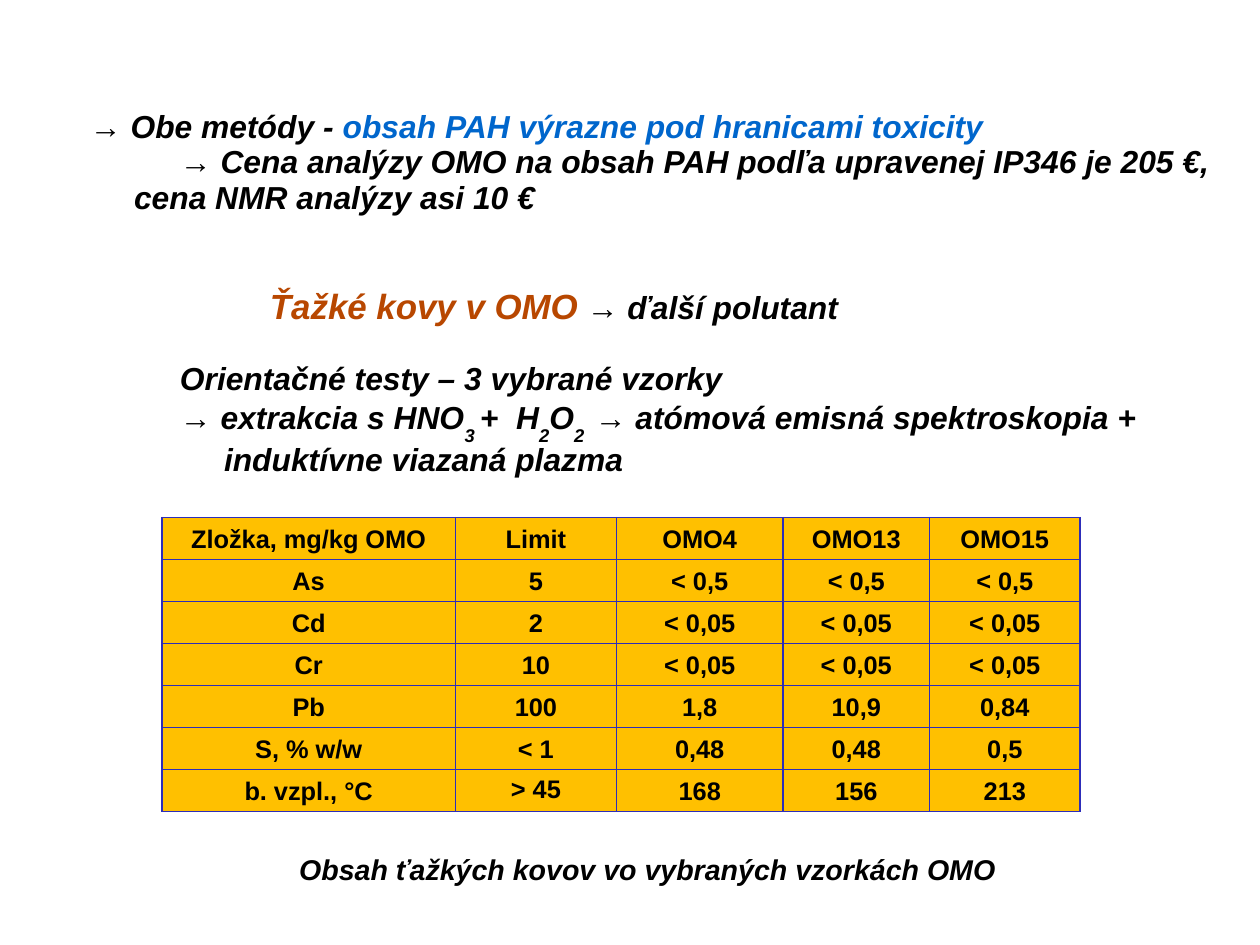
from dataclasses import dataclass, field
from itertools import product
from typing import Any, NamedTuple

from lxml.etree import SubElement
from pptx import Presentation
from pptx.dml.color import RGBColor
from pptx.enum.text import MSO_ANCHOR, PP_ALIGN
from pptx.oxml.ns import qn
from pptx.util import Emu, Inches, Pt

SLIDE_WIDTH, SLIDE_HEIGHT = Emu(10080625), Emu(7559675)
UNIT = SLIDE_WIDTH / 14


@dataclass(frozen=True)
class Theme:
    font: str = "Arial"
    ink: str = "000000"
    result: str = "0066CC"
    heading: str = "B84700"
    cell: str = "FFC000"
    border: str = "2D2DB9"
    body_size: int = 20
    heading_size: int = 22
    table_size: int = 16
    caption_size: int = 18
    border_width: float = 1
    subscript: int = -42000
    line_spacing: float = 0.93
    cell_spacing: float = 0.87


THEME = Theme()


class Frame(NamedTuple):
    column: float
    row: float
    columns: float
    rows: float


class Phrase(NamedTuple):
    text: str
    color: str = THEME.ink
    size: int = THEME.body_size
    italic: bool = True
    lowered: bool = False


@dataclass(frozen=True)
class Passage:
    phrases: list[Phrase]
    margin: float = 0
    indent: float = 0
    layout: dict[str, Any] = field(default_factory=dict)


FINDINGS_FRAME = Frame(1, 1, 12.6, 4.55)
FINDINGS_INSET = 0.22
FINDINGS = [
    Passage([Phrase("→ Obe metódy - "),
             Phrase("obsah PAH výrazne pod hranicami toxicity", THEME.result)]),
    Passage([Phrase("→ Cena analýzy OMO na obsah PAH podľa upravenej IP346 je 205 €, "
                    "cena NMR analýzy asi 10 €")], 0.49, 0.51),
    Passage([Phrase("Ťažké kovy v OMO", THEME.heading, THEME.heading_size),
             Phrase(" → ďalší polutant")], 2, 0, {"space_before": Pt(45.5)}),
    Passage([Phrase("Orientačné testy – 3 vybrané vzorky")], 1, 0, {"space_before": Pt(22)}),
    Passage([Phrase("→ extrakcia s HNO"), Phrase("3 ", lowered=True),
             Phrase("+  H"), Phrase("2", lowered=True),
             Phrase("O"), Phrase("2  ", lowered=True),
             Phrase("→ atómová emisná spektroskopia + induktívne viazaná plazma")],
            1.49, -0.49),
]

METALS_FRAME = Frame(1.8, 5.75, 10.2, 3.27)
METALS_COLUMNS = [3.26, 1.79, 1.85, 1.63, 1.67]
METALS = [
    ["Zložka, mg/kg OMO", "Limit", "OMO4", "OMO13", "OMO15"],
    ["As", "5", "< 0,5", "< 0,5", "< 0,5"],
    ["Cd", "2", "< 0,05", "< 0,05", "< 0,05"],
    ["Cr", "10", "< 0,05", "< 0,05", "< 0,05"],
    ["Pb", "100", "1,8", "10,9", "0,84"],
    ["S, % w/w", "< 1", "0,48", "0,48", "0,5"],
    ["b. vzpl., °C", "> 45", "168", "156", "213"],
]
CELL_FORMAT = {"margin_top": Inches(0.1), "margin_bottom": Inches(0.03)}
FLASH_LIMIT = "> 45"
FLASH_FORMAT = {"vertical_anchor": MSO_ANCHOR.MIDDLE}

CAPTION_FRAME = Frame(3.2, 9.44, 8.07, 0.48)
CAPTION = Passage([Phrase("Obsah ťažkých kovov vo vybraných vzorkách OMO",
                          size=THEME.caption_size)])


def grid(units: float) -> int:
    return round(units * UNIT)


def apply(target: Any, values: dict[str, Any]) -> None:
    for name, value in values.items():
        setattr(target, name, value)


def write_passage(paragraph: Any, passage: Passage) -> None:
    apply(paragraph, {"line_spacing": THEME.line_spacing, **passage.layout})
    properties = paragraph._p.get_or_add_pPr()
    properties.set("marL", str(grid(passage.margin)))
    properties.set("indent", str(grid(passage.indent)))
    for phrase in passage.phrases:
        run = paragraph.add_run()
        run.text = phrase.text
        apply(run.font, {"name": THEME.font, "size": Pt(phrase.size),
                         "bold": True, "italic": phrase.italic})
        run.font.color.rgb = RGBColor.from_string(phrase.color)
        if phrase.lowered:
            run._r.get_or_add_rPr().set("baseline", str(THEME.subscript))


def draw_passages(slide: Any, frame: Frame, passages: list[Passage],
                  settings: dict[str, Any]) -> None:
    text = slide.shapes.add_textbox(*map(grid, frame)).text_frame
    apply(text, settings)
    for index, passage in enumerate(passages):
        paragraph = text.add_paragraph() if index else text.paragraphs[0]
        write_passage(paragraph, passage)


def draw_borders(cell: Any) -> None:
    properties = cell._tc.get_or_add_tcPr()
    for position, side in enumerate(("lnL", "lnR", "lnT", "lnB")):
        line = SubElement(properties, qn(f"a:{side}"), w=str(Pt(THEME.border_width)))
        fill = SubElement(line, qn("a:solidFill"))
        SubElement(fill, qn("a:srgbClr"), val=THEME.border)
        properties.insert(position, line)


def draw_metals(slide: Any) -> None:
    table = slide.shapes.add_table(len(METALS), len(METALS_COLUMNS),
                                   *map(grid, METALS_FRAME)).table
    apply(table, {"first_row": False, "horz_banding": False})
    for column, width in zip(table.columns, METALS_COLUMNS):
        column.width = grid(width)
    for row, column in product(range(len(METALS)), range(len(METALS_COLUMNS))):
        value, cell = METALS[row][column], table.cell(row, column)
        is_flash = value == FLASH_LIMIT
        apply(cell, FLASH_FORMAT if is_flash else CELL_FORMAT)
        cell.fill.solid()
        cell.fill.fore_color.rgb = RGBColor.from_string(THEME.cell)
        draw_borders(cell)
        spacing = THEME.line_spacing if is_flash else THEME.cell_spacing
        phrase = Phrase(value, size=THEME.table_size, italic=False)
        write_passage(cell.text_frame.paragraphs[0], Passage(
            [phrase], layout={"alignment": PP_ALIGN.CENTER, "line_spacing": spacing}))


def main() -> None:
    presentation = Presentation()
    apply(presentation, {"slide_width": SLIDE_WIDTH, "slide_height": SLIDE_HEIGHT})
    slide = presentation.slides.add_slide(presentation.slide_layouts[6])
    draw_passages(slide, FINDINGS_FRAME, FINDINGS, {
        "word_wrap": True, "margin_left": 0, "margin_right": 0,
        "margin_top": grid(FINDINGS_INSET), "margin_bottom": 0})
    draw_metals(slide)
    draw_passages(slide, CAPTION_FRAME, [CAPTION], {"word_wrap": False})
    presentation.save("out.pptx")


if __name__ == "__main__":
    main()
